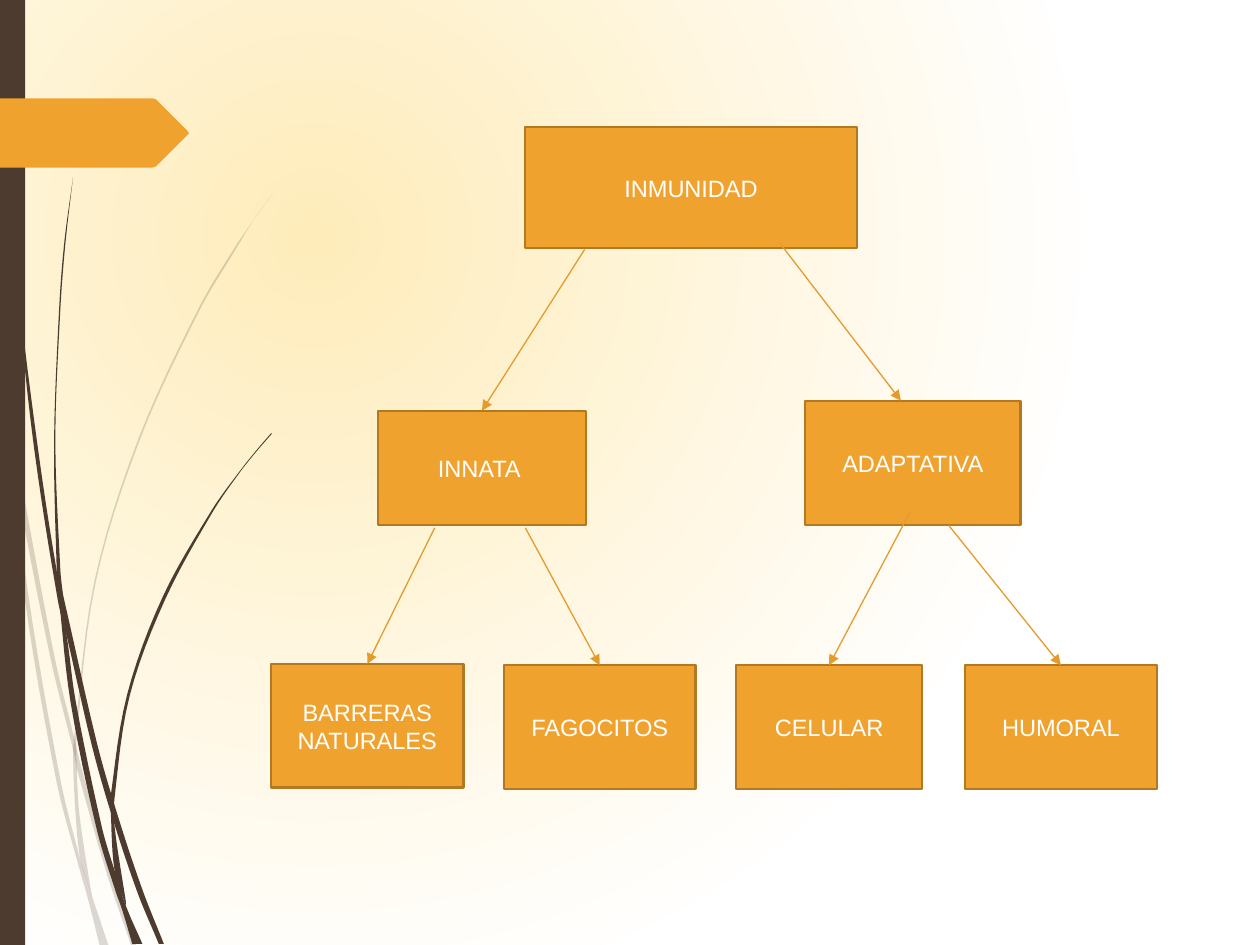
"""Build the slide with the concept tree of immunity."""
import dataclasses

import lxml.etree
import pptx
import pptx.dml.color
import pptx.enum.shapes
import pptx.enum.text
import pptx.oxml.ns
import pptx.util

Inches = pptx.util.Inches
Pt = pptx.util.Pt
qn = pptx.oxml.ns.qn
SHAPES = pptx.enum.shapes.MSO_SHAPE


@dataclasses.dataclass(frozen=True)
class Theme:
    """Colours and sizes of the slide."""
    glow: str = "FEECBA"
    paper: str = "FFFFFF"
    bark: str = "4E3B30"
    accent: str = "F0A22E"
    border: str = "B27822"
    arrow: str = "E59B2C"
    label: str = "FFFFFF"
    font: str = "Arial"
    label_size: float = 13.5
    border_width: float = 1.25
    arrow_width: float = 0.75
    pale_opacity: int = 20


THEME = Theme()

PALE_STALKS = [
    ([(0.1, 3.45), (0.12, 3.76), (0.4, 5.22), (0.59, 5.99), (0.61, 6.1),
      (0.85, 6.94), (1.04, 7.5)],
     [(0.1, 3.45), (0.43, 5.2), (0.59, 5.86), (0.64, 6.07), (0.88, 6.92),
      (1.08, 7.5)]),
    ([(0.08, 3.5), (0.19, 4.7), (0.45, 6.21), (0.64, 6.93), (0.7, 7.14),
      (0.79, 7.5)],
     [(0.08, 3.5), (0.12, 3.76), (0.22, 4.69), (0.48, 6.19), (0.64, 6.83),
      (0.73, 7.11), (0.86, 7.5)]),
    ([(2.17, 1.53), (2.01, 1.75), (1.86, 1.97), (1.58, 2.44), (1.1, 3.48),
      (0.75, 4.61), (0.59, 5.84), (0.58, 5.99), (0.6, 6.46), (0.64, 6.83),
      (0.73, 7.11)],
     [(2.17, 1.53), (2.01, 1.75), (1.87, 1.98), (1.59, 2.45), (1.11, 3.49),
      (0.76, 4.62), (0.61, 5.84), (0.61, 6.1), (0.63, 6.46), (0.72, 7.06)]),
]
DARK_STALKS = [
    ([(0.02, 0), (0.05, 1.1), (0.14, 2.33), (0.27, 3.55), (0.46, 4.77),
      (0.53, 5.05), (0.73, 5.92), (0.88, 6.45), (1.09, 7.08), (1.26, 7.49)],
     [(0.03, 0), (0.06, 1.09), (0.15, 2.32), (0.3, 3.55), (0.45, 4.53),
      (0.5, 4.72), (0.77, 5.9), (0.94, 6.49), (1.13, 7.06), (1.3, 7.49)]),
    ([(0.47, 4.77), (0.56, 5.57), (0.77, 6.59), (0.92, 7.08), (0.97, 7.22),
      (1.05, 7.49)],
     [(0.47, 4.77), (0.53, 5.05), (0.6, 5.56), (0.81, 6.57), (0.91, 6.91),
      (1, 7.19), (1.13, 7.49)]),
    ([(0.58, 1.41), (0.51, 1.93), (0.47, 2.45), (0.43, 3.49), (0.45, 4.49),
      (0.47, 4.77), (0.53, 5.05)],
     [(0.58, 1.41), (0.52, 1.93), (0.48, 2.45), (0.44, 3.49), (0.48, 4.53),
      (0.5, 4.72), (0.53, 5.05)]),
    ([(2.15, 3.44), (2.03, 3.58), (1.91, 3.73), (1.68, 4.05), (1.29, 4.74),
      (1.01, 5.51), (0.88, 6.31), (0.88, 6.45), (0.91, 6.91), (1, 7.19)],
     [(2.16, 3.44), (2.03, 3.59), (1.91, 3.74), (1.69, 4.06), (1.31, 4.76),
      (1.03, 5.52), (0.91, 6.33), (0.91, 6.56), (1, 7.16)]),
]
BANNER = [(0, 0.78), (1.21, 0.78), (1.24, 0.79), (1.49, 1.04), (1.5, 1.06),
          (1.49, 1.07), (1.24, 1.32), (1.21, 1.33), (0, 1.33)]
CONCEPTS = {
    "INMUNIDAD": (4.17, 1.01, 2.63, 0.96),
    "INNATA ": (3, 3.26, 1.65, 0.91),
    "ADAPTATIVA": (6.39, 3.18, 1.71, 0.99),
    "BARRERAS NATURALES": (2.15, 5.27, 1.53, 0.98),
    "FAGOCITOS": (4, 5.28, 1.52, 0.98),
    "CELULAR": (5.84, 5.28, 1.48, 0.98),
    "HUMORAL": (7.66, 5.28, 1.52, 0.98),
}
BRANCHES = [
    ((4.64, 1.98), (3.82, 3.23), "INNATA "),
    ((6.19, 1.93), (7.15, 3.18), None),
    ((3.45, 4.19), (2.91, 5.27), "BARRERAS NATURALES"),
    ((4.17, 4.19), (4.76, 5.28), "FAGOCITOS"),
    ((7.22, 4.07), (6.58, 5.28), "CELULAR"),
    ((7.53, 4.17), (8.42, 5.28), "HUMORAL"),
]


def rgb(value):
    """Return a colour from its hex value."""
    return pptx.dml.color.RGBColor.from_string(value)


def apply(target, formats):
    """Set each attribute named in a dict of format values."""
    for key, value in formats.items():
        setattr(target, key, value)


def paint_background(slide):
    """Fill the background with a circular glow."""
    fill = slide.background.fill
    fill.gradient()
    for stop, colour in zip(fill.gradient_stops, (THEME.glow, THEME.paper)):
        stop.color.rgb = rgb(colour)
    gradient = slide.element.find(".//" + qn("a:gradFill"))
    gradient.remove(gradient.find(qn("a:lin")))
    circle = lxml.etree.SubElement(gradient, qn("a:path"), {"path": "circle"})
    lxml.etree.SubElement(circle, qn("a:fillToRect"),
                          {"l": "50000", "t": "50000", "r": "100000", "b": "100000"})


def fill_plain(shape, colour, opacity=100):
    """Give a shape a plain fill without line or shadow."""
    shape.shadow.inherit = False
    shape.fill.solid()
    shape.fill.fore_color.rgb = rgb(colour)
    shape.line.fill.background()
    if opacity < 100:
        tint = shape.element.spPr.find(qn("a:solidFill")).find(qn("a:srgbClr"))
        lxml.etree.SubElement(tint, qn("a:alpha"), {"val": str(opacity * 1000)})


def smooth(edge, steps=6):
    """Run a Hermite curve through the points of an edge, x depending on y."""
    last = len(edge) - 1
    slopes = []
    for i in range(len(edge)):
        (x0, y0), (x1, y1) = edge[max(i - 1, 0)], edge[min(i + 1, last)]
        slopes.append((x1 - x0) / (y1 - y0))
    curve = [edge[0]]
    for i in range(last):
        (x0, y0), (x1, y1) = edge[i], edge[i + 1]
        rise = y1 - y0
        for t in (step / steps for step in range(1, steps + 1)):
            blend = t * t * (3 - 2 * t)
            bend = t * (1 - t) * ((1 - t) * slopes[i] - t * slopes[i + 1])
            curve.append((x0 + (x1 - x0) * blend + rise * bend, y0 + rise * t))
    return curve


def add_outline(slide, points, colour, opacity=100):
    """Add a filled closed outline."""
    corners = [(Inches(x), Inches(y)) for x, y in points]
    builder = slide.shapes.build_freeform(*corners[0])
    builder.add_line_segments(corners[1:], close=True)
    fill_plain(builder.convert_to_shape(), colour, opacity)


def add_stalks(slide, stalks, opacity=100):
    """Add grass stalks, each between a left and a right edge."""
    for left, right in stalks:
        add_outline(slide, smooth(left) + smooth(right)[::-1], THEME.bark, opacity)


def add_concept(slide, label, place, preset):
    """Add a labelled concept box."""
    box = slide.shapes.add_shape(preset, *map(Inches, place))
    fill_plain(box, THEME.accent)
    box.line.color.rgb = rgb(THEME.border)
    box.line.width = Pt(THEME.border_width)
    apply(box.text_frame, {"text": label, "word_wrap": True,
                           "vertical_anchor": pptx.enum.text.MSO_ANCHOR.MIDDLE})
    paragraph = box.text_frame.paragraphs[0]
    paragraph.alignment = pptx.enum.text.PP_ALIGN.CENTER
    font = paragraph.runs[0].font
    apply(font, {"name": THEME.font, "size": Pt(THEME.label_size)})
    font.color.rgb = rgb(THEME.label)
    return box


def add_branch(slide, start, end, child):
    """Add an arrow, joined to the top of its child concept if given."""
    branch = slide.shapes.add_connector(pptx.enum.shapes.MSO_CONNECTOR.STRAIGHT,
                                        *map(Inches, start + end))
    if child is not None:
        branch.end_connect(child, 0)
    branch.line.color.rgb = rgb(THEME.arrow)
    branch.line.width = Pt(THEME.arrow_width)
    lxml.etree.SubElement(branch.line._get_or_add_ln(), qn("a:tailEnd"),
                          {"type": "triangle"})
    lxml.etree.SubElement(branch.element.spPr, qn("a:effectLst"))


def main():
    """Build and save the slide."""
    deck = pptx.Presentation()
    apply(deck, {"slide_width": Inches(10), "slide_height": Inches(7.5)})
    slide = deck.slides.add_slide(deck.slide_layouts[6])
    paint_background(slide)
    add_stalks(slide, PALE_STALKS, THEME.pale_opacity)
    add_stalks(slide, DARK_STALKS)
    trunk = slide.shapes.add_shape(SHAPES.RECTANGLE, 0, 0, Inches(0.2), Inches(7.5))
    fill_plain(trunk, THEME.bark)
    add_outline(slide, BANNER, THEME.accent)
    concepts = {}
    for label, place in CONCEPTS.items():
        preset = SHAPES.RECTANGLE if concepts else SHAPES.FLOWCHART_PROCESS
        concepts[label] = add_concept(slide, label, place, preset)
    for start, end, child in BRANCHES:
        add_branch(slide, start, end, concepts.get(child))
    deck.save("out.pptx")


if __name__ == "__main__":
    main()
